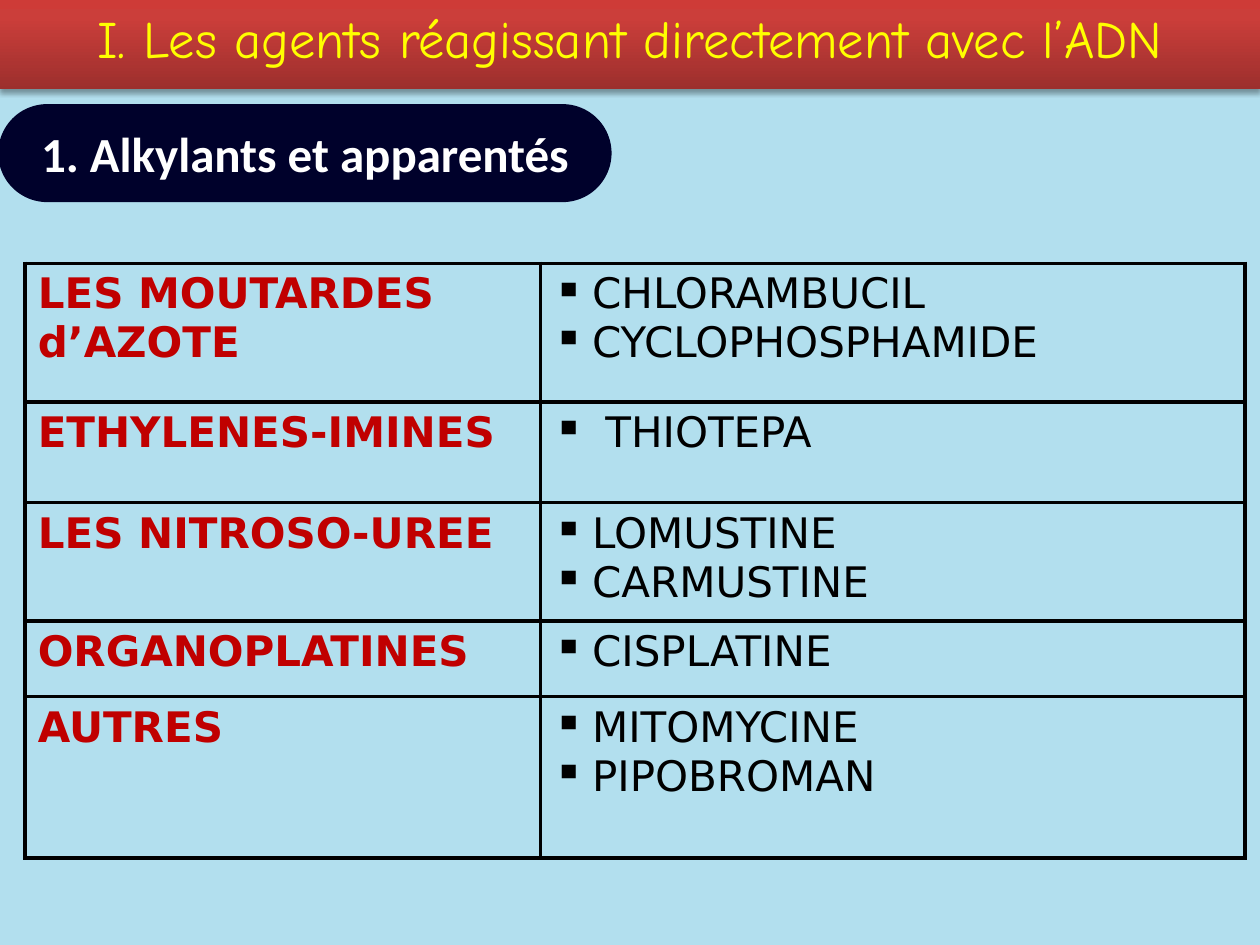
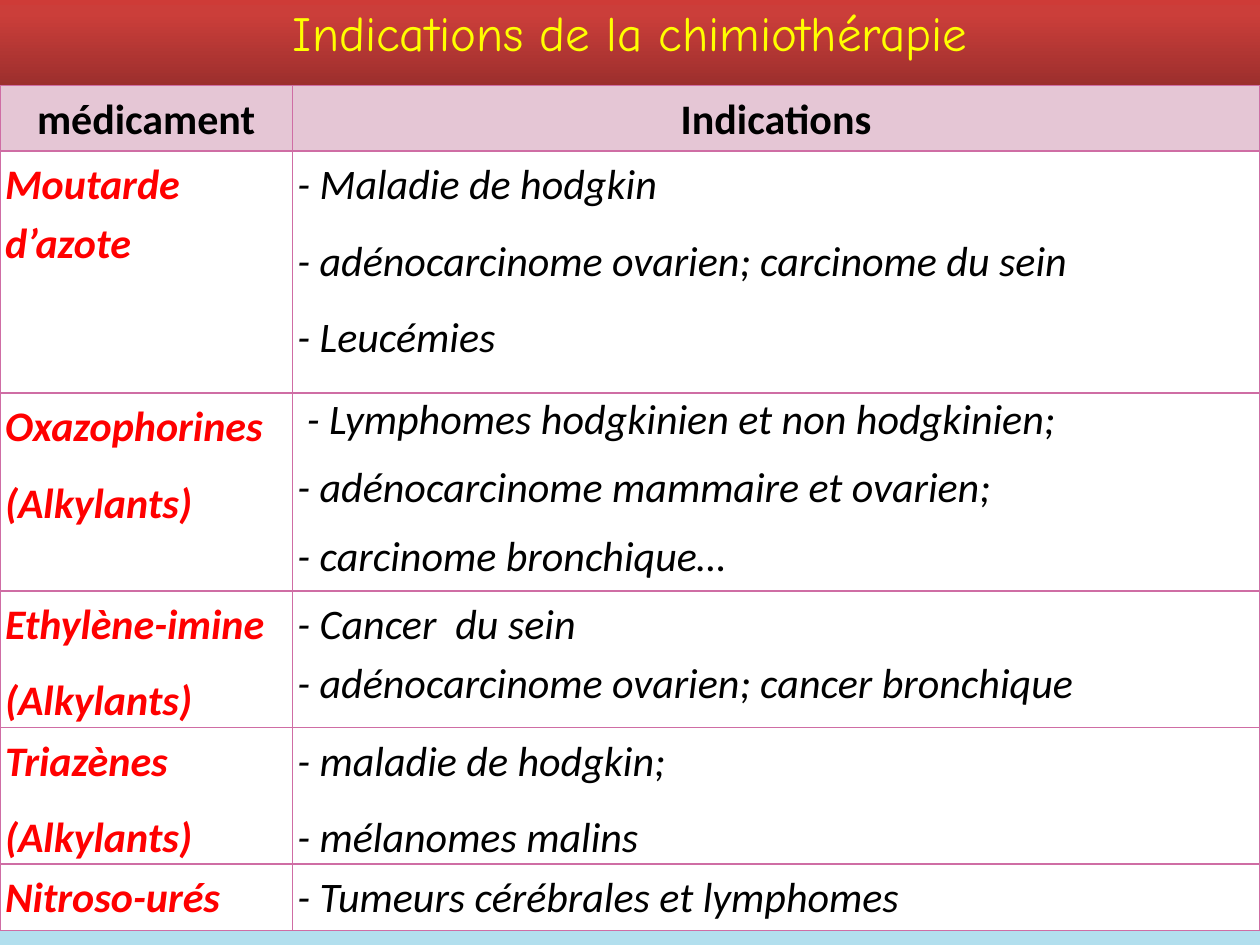
from dataclasses import dataclass

from lxml.etree import SubElement
from pptx import Presentation
from pptx.dml.color import RGBColor
from pptx.enum.shapes import MSO_SHAPE
from pptx.enum.text import MSO_ANCHOR, PP_ALIGN
from pptx.oxml import parse_xml
from pptx.oxml.ns import nsdecls, qn
from pptx.util import Inches, Pt


@dataclass(frozen=True)
class Theme:
    sky: str = "B2DFEE"
    navy: str = "00012B"
    white: str = "FFFFFF"
    black: str = "000000"
    yellow: str = "FFFF00"
    crimson: str = "C00000"
    red: str = "FF0000"
    rose: str = "E5C6D5"
    pink: str = "CF6DA4"
    band: tuple = ((0, "9C2F2D"), (80, "CB3E3A"), (100, "CE3B37"))
    title: str = "Comic Neue"
    body: str = "Calibri"
    plain: str = "DejaVu Sans"
    label: int = 28
    text: int = 24


THEME = Theme()

FAMILIES = [
    ("LES MOUTARDES d’AZOTE", ["CHLORAMBUCIL", "CYCLOPHOSPHAMIDE"]),
    ("ETHYLENES-IMINES", [" THIOTEPA"]),
    ("LES NITROSO-UREE", ["LOMUSTINE", "CARMUSTINE"]),
    ("ORGANOPLATINES", ["CISPLATINE"]),
    ("AUTRES", ["MITOMYCINE", "PIPOBROMAN"]),
]

USES = [
    (["Moutarde d’azote"],
     ["- Maladie de hodgkin", "- adénocarcinome ovarien; carcinome du sein", "- Leucémies"]),
    (["Oxazophorines", "(Alkylants)"],
     [" - Lymphomes hodgkinien et non hodgkinien;",
      "- adénocarcinome mammaire et ovarien;", "- carcinome bronchique…"]),
    (["Ethylène-imine", "(Alkylants)"],
     ["- Cancer  du sein", "- adénocarcinome ovarien; cancer bronchique"]),
    (["Triazènes", "(Alkylants)"], ["- maladie de hodgkin;", "- mélanomes malins"]),
    (["Nitroso-urés"], ["- Tumeurs cérébrales et lymphomes"]),
]


def color(code):
    return RGBColor.from_string(code)


def write(frame, lines, font, size, ink, bold=False, italic=False, align=None):
    frame.text = "\n".join(lines)
    for para in frame.paragraphs:
        para.alignment = align
        for run in para.runs:
            run.font.name = font
            run.font.size = Pt(size)
            run.font.color.rgb = color(ink)
            run.font.bold = bold
            run.font.italic = italic


def add_slide(deck):
    slide = deck.slides.add_slide(deck.slide_layouts[6])
    slide.background.fill.solid()
    slide.background.fill.fore_color.rgb = color(THEME.sky)
    return slide


def add_band(slide, text, top, size):
    band = slide.shapes.add_shape(
        MSO_SHAPE.RECTANGLE, 0, Inches(top), Inches(10), Inches(0.71))
    band.line.fill.background()
    stops = "".join(
        f'<a:gs pos="{pos * 1000}"><a:srgbClr val="{code}"/></a:gs>'
        for pos, code in THEME.band)
    props = band.element.spPr
    props.find(qn("a:ln")).addprevious(parse_xml(
        f'<a:gradFill {nsdecls("a")} rotWithShape="1"><a:gsLst>{stops}</a:gsLst>'
        '<a:lin ang="16200000" scaled="0"/></a:gradFill>'))
    props.append(parse_xml(
        f'<a:effectLst {nsdecls("a")}><a:outerShdw blurRad="{Pt(3.1)}" '
        f'dist="{Pt(1.8)}" dir="5400000" rotWithShape="0">'
        f'<a:srgbClr val="{THEME.black}"><a:alpha val="35000"/></a:srgbClr>'
        '</a:outerShdw></a:effectLst>'))
    band.text_frame.vertical_anchor = MSO_ANCHOR.TOP
    write(band.text_frame, [text], THEME.title, size, THEME.yellow,
          align=PP_ALIGN.CENTER)


def add_pill(slide, text):
    pill = slide.shapes.add_shape(
        MSO_SHAPE.ROUNDED_RECTANGLE, 0, Inches(0.84), Inches(4.84), Inches(0.75))
    pill.adjustments[0] = 0.5
    pill.shadow.inherit = False
    pill.fill.solid()
    pill.fill.fore_color.rgb = color(THEME.navy)
    pill.line.color.rgb = color(THEME.navy)
    pill.line.width = Pt(2)
    write(pill.text_frame, [text], THEME.body, THEME.label, THEME.white,
          bold=True, align=PP_ALIGN.CENTER)


def add_grid(slide, left, top, cols, rows, edge, width):
    table = slide.shapes.add_table(
        len(rows), len(cols), Inches(left), Inches(top),
        Inches(sum(cols)), Inches(sum(rows))).table
    table.first_row = table.horz_banding = False
    for col, size in zip(table.columns, cols):
        col.width = Inches(size)
    for row, size in zip(table.rows, rows):
        row.height = Inches(size)
    for cell in table.iter_cells():
        cell.fill.background()
        props = cell._tc.get_or_add_tcPr()
        for spot, side in enumerate("LRTB"):
            props.insert(spot, parse_xml(
                f'<a:ln{side} {nsdecls("a")} w="{Pt(width)}"><a:solidFill>'
                f'<a:srgbClr val="{edge}"/></a:solidFill></a:ln{side}>'))
    return table


def add_marks(frame):
    for para in frame.paragraphs:
        props = para._p.get_or_add_pPr()
        props.set("marL", str(Inches(0.31)))
        props.set("indent", str(-Inches(0.31)))
        SubElement(props, qn("a:buChar"), char="▪")


def fill_cell(cell, lines, ink, back, **style):
    cell.fill.solid()
    cell.fill.fore_color.rgb = color(back)
    cell.margin_left = cell.margin_right = Inches(0.04)
    cell.margin_top = Inches(0.01)
    cell.margin_bottom = 0
    write(cell.text_frame, lines, THEME.body, THEME.text, ink, **style)
    for para in cell.text_frame.paragraphs:
        para.line_spacing = 1.15
        para.space_after = Pt(10)


def add_agents(deck):
    slide = add_slide(deck)
    table = add_grid(slide, 0.2, 2.09, [4.09, 5.59],
                     [1.1, 0.8, 0.94, 0.6, 1.28], THEME.black, 2.25)
    for row, (name, drugs) in enumerate(FAMILIES):
        write(table.cell(row, 0).text_frame, [name], THEME.plain, THEME.text,
              THEME.crimson, bold=True)
        frame = table.cell(row, 1).text_frame
        write(frame, drugs, THEME.plain, THEME.text, THEME.black)
        add_marks(frame)
    add_pill(slide, "1. Alkylants et apparentés")
    add_band(slide, "I. Les agents réagissant directement avec l’ADN", 0, 30)


def add_uses(deck):
    slide = add_slide(deck)
    add_band(slide, "Indications de la chimiothérapie", -0.03, THEME.label)
    table = add_grid(slide, 0, 0.68, [2.32, 7.68],
                     [0.52, 1.92, 1.57, 1.08, 1.08, 0.53], THEME.pink, 1)
    for col, head in enumerate(["médicament", "Indications"]):
        fill_cell(table.cell(0, col), [head], THEME.black, THEME.rose,
                  bold=True, align=PP_ALIGN.CENTER)
    for row, (names, uses) in enumerate(USES, 1):
        fill_cell(table.cell(row, 0), names, THEME.red, THEME.white,
                  bold=True, italic=True)
        fill_cell(table.cell(row, 1), uses, THEME.black, THEME.white, italic=True)
    for para in table.cell(2, 1).text_frame.paragraphs:
        para.line_spacing = 1.0
    table.cell(3, 1).text_frame.paragraphs[0].space_after = Pt(0)


def main():
    deck = Presentation()
    deck.slide_width = Inches(10)
    deck.slide_height = Inches(7.5)
    add_agents(deck)
    add_uses(deck)
    deck.save("out.pptx")


if __name__ == "__main__":
    main()
